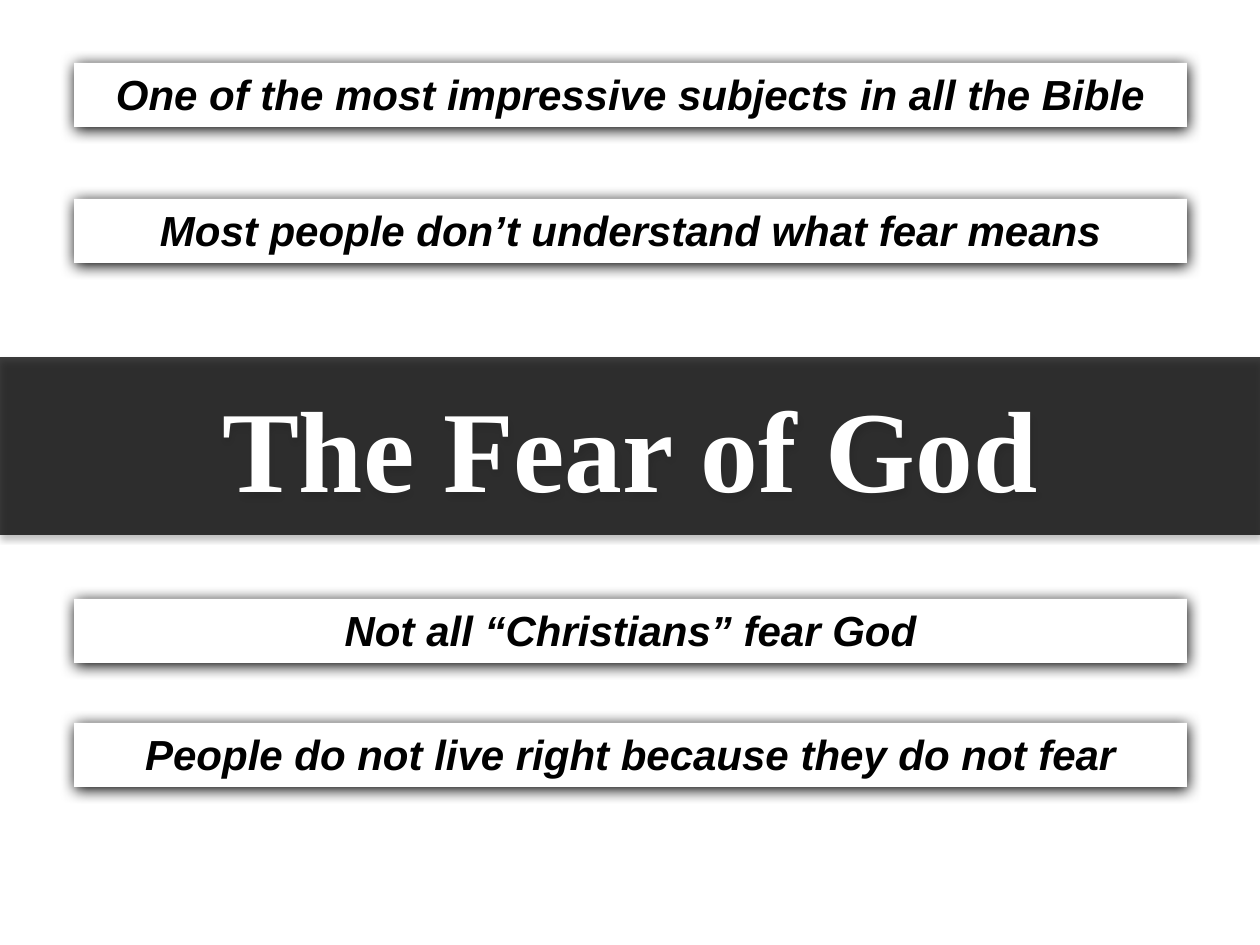
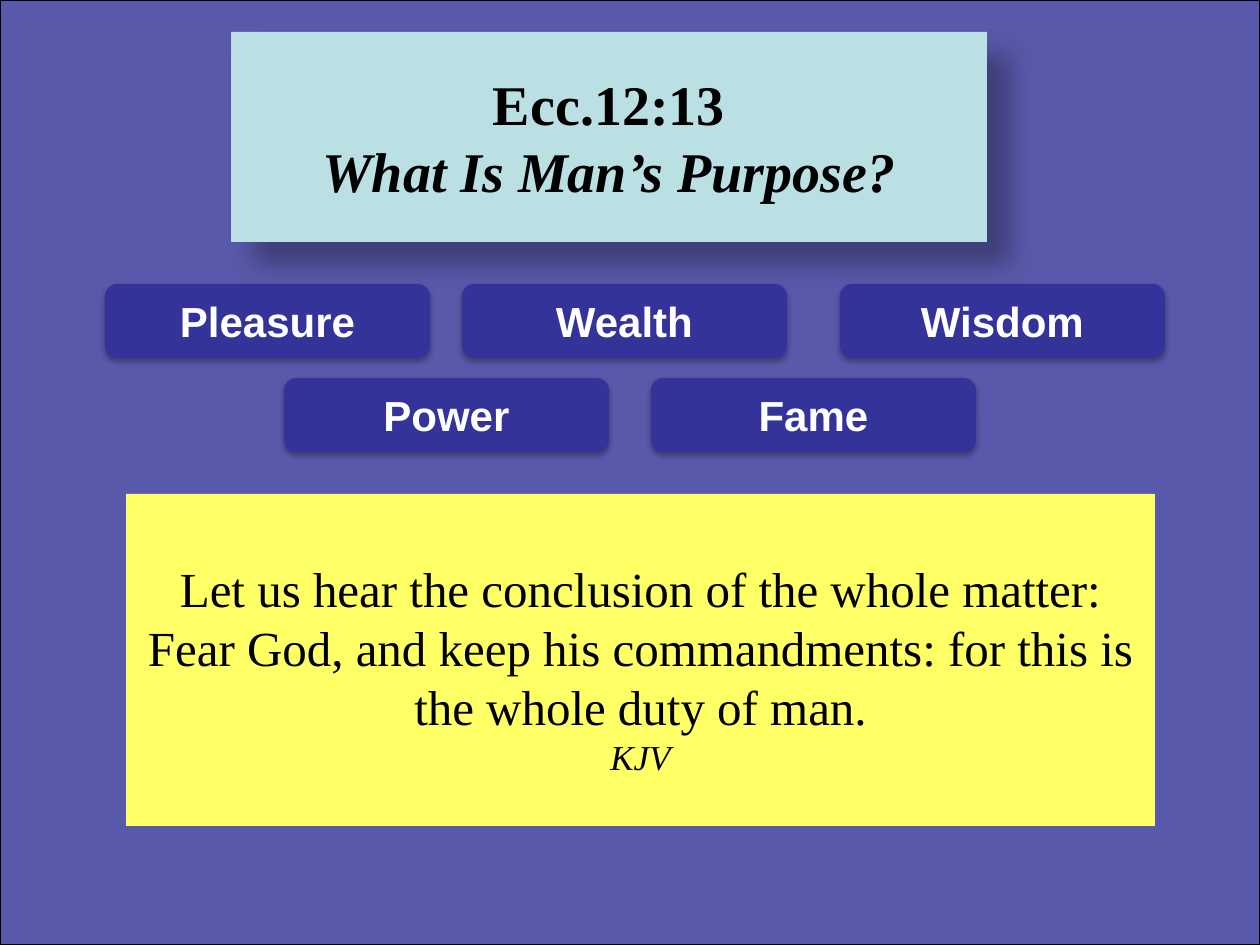
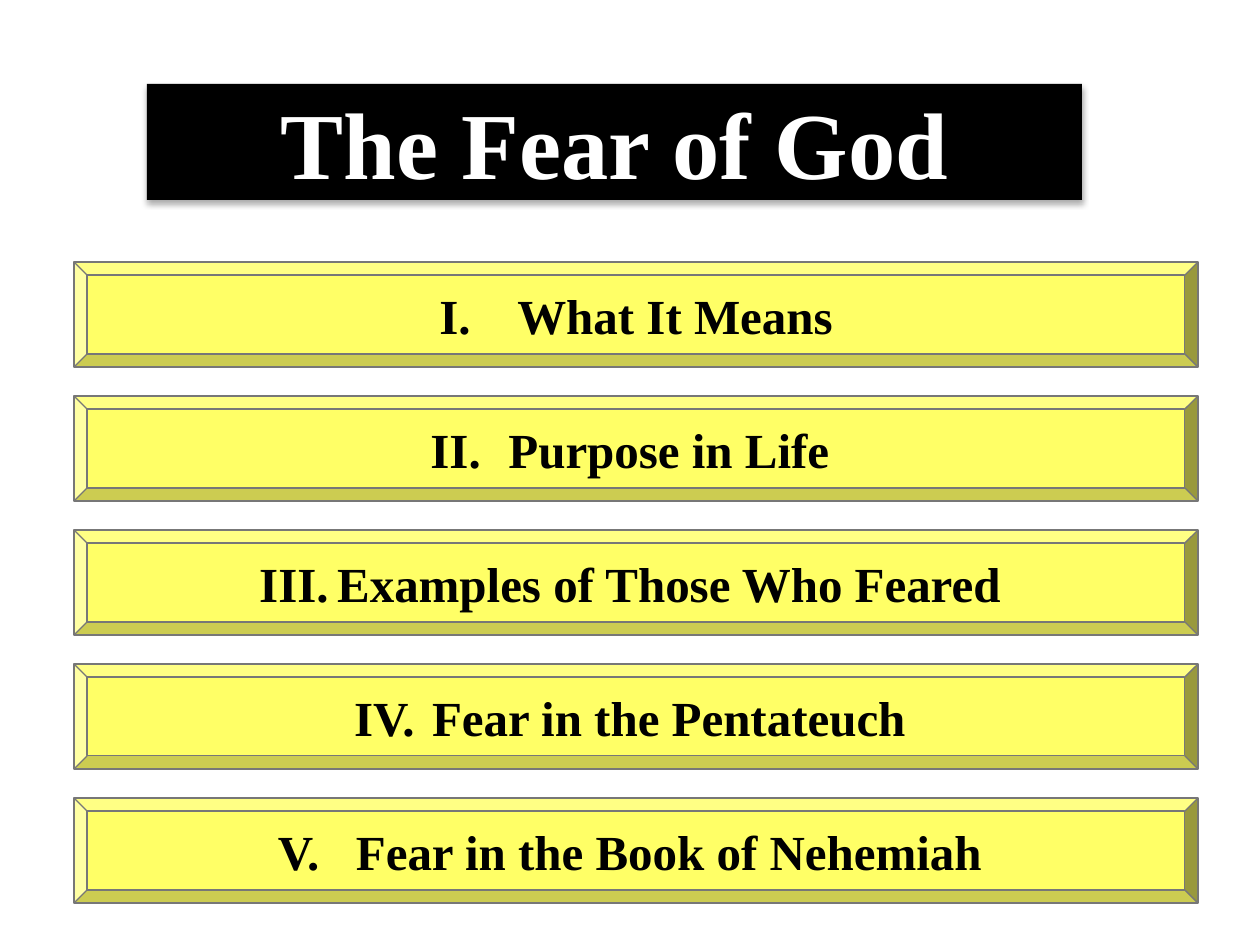
from lxml import etree
from pptx import Presentation
from pptx.dml.color import RGBColor
from pptx.enum import shapes, text
from pptx.oxml import ns
from pptx.util import Emu, Pt

COLORS = {
    "black": "000000", "white": "FFFFFF", "navy": "333399",
    "ice": "BBE0E3", "yellow": "FFFF66", "grey": "777777",
}
SERIF, SANS = "Times New Roman", "Arial"
SIZE = (1260, 945)
SOFT = (32, 3.5, 2.2, 90)
HALO = (100, 8.5, 1, 90)
DROP = (30, 15, 18, 45)

THEME = "The Fear of God"
STATEMENTS = [
    (63, "One of the most impressive subjects in all the Bible"),
    (199, "Most people don’t understand what fear means"),
    (599, "Not all “Christians” fear God"),
    (723, "People do not live right because they do not fear"),
]
QUESTION = ["Ecc.12:13", "What Is Man’s Purpose?"]
PURSUITS = [
    (105, 284, "Pleasure"), (462, 284, "Wealth"), (840, 284, "Wisdom"),
    (284, 378, "Power"), (651, 378, "Fame"),
]
VERSE = [
    "Let us hear the conclusion of the whole matter: Fear God, and keep his "
    "commandments: for this is the whole duty of man.",
    "KJV",
]
OUTLINE = [
    "What It Means",
    "Purpose in Life ",
    "Examples of Those Who Feared ",
    "Fear in the Pentateuch ",
    "Fear in the Book of Nehemiah ",
]


def px(length):
    return Emu(round(length * 914400 / 126))


def rgb(name):
    return RGBColor.from_string(COLORS[name])


def add_xml(parent, tag, **attributes):
    child = etree.SubElement(parent, ns.qn(tag))
    for key, value in attributes.items():
        child.set(key, str(value))
    return child


def paint(box, fill, alpha=100, line=None, shadow=None):
    box.fill.solid()
    box.fill.fore_color.rgb = rgb(fill)
    properties = box.element.spPr
    if alpha < 100:
        color = properties.find(".//" + ns.qn("a:srgbClr"))
        add_xml(color, "a:alpha", val=alpha * 1000)
    if line:
        box.line.color.rgb = rgb(line)
        box.line.width = Pt(0.75)
    else:
        box.line.fill.background()
    box.shadow.inherit = False
    if shadow:
        opacity, blur, distance, angle = shadow
        outer = add_xml(
            properties.find(ns.qn("a:effectLst")), "a:outerShdw",
            blurRad=Pt(blur), dist=Pt(distance), dir=angle * 60000,
            algn="ctr", rotWithShape=0)
        color = add_xml(outer, "a:srgbClr", val=COLORS["black"])
        add_xml(color, "a:alpha", val=opacity * 1000)


def write(box, lines, size, font=SERIF, color="black", bold=True, italic=False,
          wrap=False, anchor=text.MSO_ANCHOR.MIDDLE):
    frame = box.text_frame
    frame.text = "\n".join(lines)
    frame.auto_size = text.MSO_AUTO_SIZE.NONE
    frame.word_wrap = wrap
    frame.vertical_anchor = anchor
    frame.margin_left = frame.margin_right = px(13)
    frame.margin_top = frame.margin_bottom = px(6)
    for para in frame.paragraphs:
        para.alignment = text.PP_ALIGN.CENTER
        for span in para.runs:
            span.font.name = font
            span.font.size = Pt(size)
            span.font.bold = bold
            span.font.italic = italic
            span.font.color.rgb = rgb(color)
    return frame


def add_box(page, preset, area, fill, **style):
    box = page.shapes.add_shape(preset, *map(px, area))
    paint(box, fill, **style)
    return box


def place_title(page, area, fill, preset="rect", **style):
    title = page.shapes.title
    title.left, title.top, title.width, title.height = map(px, area)
    geometry = add_xml(title.element.spPr, "a:prstGeom", prst=preset)
    add_xml(geometry, "a:avLst")
    paint(title, fill, **style)
    return title


def number(para, start):
    properties = para._p.get_or_add_pPr()
    properties.set("marL", str(px(78)))
    properties.set("indent", str(px(-78)))
    add_xml(properties, "a:buFont", typeface="+mj-lt")
    add_xml(properties, "a:buAutoNum", type="romanUcPeriod", startAt=start)


def build_opening(page):
    title = place_title(page, (0, 357, 1260, 178), "black", alpha=76, shadow=SOFT)
    write(title, [THEME], 66, color="white")
    for top, statement in STATEMENTS:
        bar = add_box(page, shapes.MSO_SHAPE.RECTANGLE, (74, top, 1113, 64),
                      "white", shadow=HALO)
        write(bar, [statement], 24, SANS, italic=True, wrap=True,
              anchor=text.MSO_ANCHOR.TOP)


def build_purpose(page):
    title = place_title(page, (231, 32, 756, 210), "ice", "ellipse", shadow=DROP)
    frame = write(title, QUESTION, 32)
    frame.paragraphs[1].runs[0].font.italic = True
    backdrop = add_box(page, shapes.MSO_SHAPE.RECTANGLE, (0, 0, *SIZE), "navy",
                       alpha=81, line="black")
    title.element.addprevious(backdrop.element)
    for left, top, pursuit in PURSUITS:
        button = add_box(page, shapes.MSO_SHAPE.ROUNDED_RECTANGLE,
                         (left, top, 325, 74), "navy", shadow=SOFT)
        write(button, [pursuit], 24, SANS, "white")
    panel = add_box(page, shapes.MSO_SHAPE.RECTANGLE, (126, 494, 1029, 332), "yellow")
    frame = write(panel, VERSE, 28, bold=False, wrap=True, anchor=text.MSO_ANCHOR.TOP)
    frame.margin_top = px(65)
    source = frame.paragraphs[1].runs[0].font
    source.size, source.italic = Pt(20), True


def build_outline(page):
    title = place_title(page, (147, 84, 935, 116), "black", shadow=SOFT)
    write(title, [THEME], 54, color="white")
    for index, topic in enumerate(OUTLINE):
        plate = add_box(page, shapes.MSO_SHAPE.BEVEL,
                        (74, 262 + 134 * index, 1124, 105), "yellow", line="grey")
        frame = write(plate, [topic], 28)
        number(frame.paragraphs[0], index + 1)


def main():
    deck = Presentation()
    deck.slide_width, deck.slide_height = map(px, SIZE)
    for build in (build_opening, build_purpose, build_outline):
        build(deck.slides.add_slide(deck.slide_layouts[5]))
    deck.save("out.pptx")


if __name__ == "__main__":
    main()
